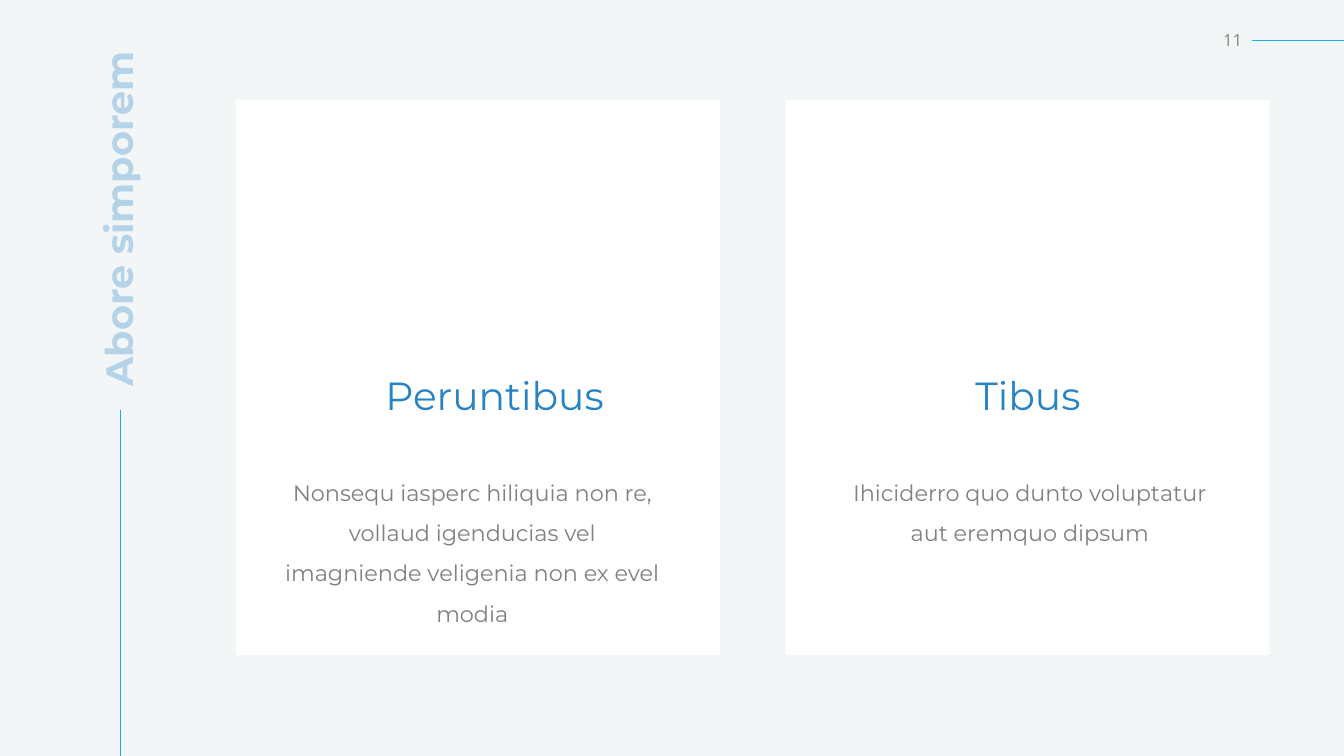
from lxml.etree import SubElement
from pptx import Presentation
from pptx.dml.color import RGBColor
from pptx.enum.shapes import MSO_CONNECTOR, MSO_SHAPE
from pptx.enum.text import MSO_ANCHOR as ANCHOR, PP_ALIGN as ALIGN
from pptx.oxml.ns import qn
from pptx.util import Inches, Pt

SLIDE_W, SLIDE_H = 13.33, 7.5
PALE, WHITE, CYAN, BLUE = "F3F6F7", "FFFFFF", "1CADE4", "2683C6"
GREY, NUMBER_GREY = "808080", "8C8C8C"


def paint(color_format, hex_color):
    color_format.rgb = RGBColor.from_string(hex_color)


def add_text(slide, box, text, size, color, align=ALIGN.LEFT, font="Montserrat",
             anchor=ANCHOR.TOP, spacing=None, wrap=True):
    label = slide.shapes.add_textbox(*map(Inches, box))
    frame = label.text_frame
    frame.text = text
    frame.word_wrap = wrap
    frame.vertical_anchor = anchor
    paragraph = frame.paragraphs[0]
    paragraph.alignment = align
    if spacing:
        paragraph.line_spacing = spacing
    run_font = paragraph.runs[0].font
    run_font.name, run_font.size = font, Pt(size)
    paint(run_font.color, color)
    return label


def add_rule(slide, x1, y1, x2, y2):
    rule = slide.shapes.add_connector(
        MSO_CONNECTOR.STRAIGHT, *map(Inches, (x1, y1, x2, y2)))
    rule.line.width = Pt(0.5)
    paint(rule.line.color, CYAN)
    SubElement(rule._element.spPr, qn("a:effectLst"))


def add_page_number(slide, left, top, width, height):
    number_width = 1.46
    add_text(slide, (left, top, number_width, height), "11", 12, NUMBER_GREY,
             ALIGN.RIGHT, "Noto Sans", ANCHOR.MIDDLE)
    middle = top + height / 2
    add_rule(slide, left + number_width, middle, left + width, middle)


def add_side_title(slide, left, top, width, height):
    # The title reads upwards, with a rule running from it to the slide's foot
    length, thickness = 3.79, 0.75
    center_x, center_y = left + width / 2, top + length / 2
    title = add_text(slide, (center_x - length / 2, center_y - thickness / 2,
                             length, thickness),
                     "Abore simporem", 27.3, BLUE, anchor=ANCHOR.MIDDLE, spacing=0.9)
    title.rotation = 270
    font = title.text_frame.paragraphs[0].runs[0].font
    font.bold = True
    # 30 % opacity
    title_color = font._element.find(".//" + qn("a:srgbClr"))
    SubElement(title_color, qn("a:alpha"), val="30000")
    add_rule(slide, center_x - 0.01, top + length + 0.14, center_x - 0.01, top + height)


def add_card(slide, left, top, width, height, heading, heading_x, body, body_x):
    panel = slide.shapes.add_shape(
        MSO_SHAPE.RECTANGLE, *map(Inches, (left, top, width, height)))
    panel.shadow.inherit = False
    panel.fill.solid()
    paint(panel.fill.fore_color, WHITE)
    panel.line.fill.background()
    add_text(slide, (left + heading_x, top + 2.64, 2.51, 0.57), heading, 28, BLUE,
             ALIGN.CENTER, wrap=False)
    add_text(slide, (left + body_x, top + 3.58, 3.97, 1.75), body, 16, GREY,
             ALIGN.CENTER, spacing=1.5)


def main():
    deck = Presentation()
    deck.slide_width, deck.slide_height = Inches(SLIDE_W), Inches(SLIDE_H)
    slide = deck.slides.add_slide(deck.slide_layouts[6])
    slide.background.fill.solid()
    paint(slide.background.fill.fore_color, PALE)

    add_page_number(slide, 10.96, 0.2, SLIDE_W - 10.96, 0.4)
    add_side_title(slide, 0.83, 0.14, 0.75, SLIDE_H - 0.14)

    # Two equal cards: heading, its offset, body, its offset
    cards = [
        ("Peruntibus", 1.31, "Nonsequ iasperc hiliquia non re, vollaud igenducias "
         "vel imagniende veligenia non ex evel modia", 0.36),
        ("Tibus", 1.15, "Ihiciderro quo dunto voluptatur aut eremquo dipsum", 0.44),
    ]
    card_width, gap = 4.8, 0.65
    for column, card in enumerate(cards):
        add_card(slide, 2.34 + column * (card_width + gap), 0.99, card_width, 5.51, *card)

    deck.save("out.pptx")


if __name__ == "__main__":
    main()
